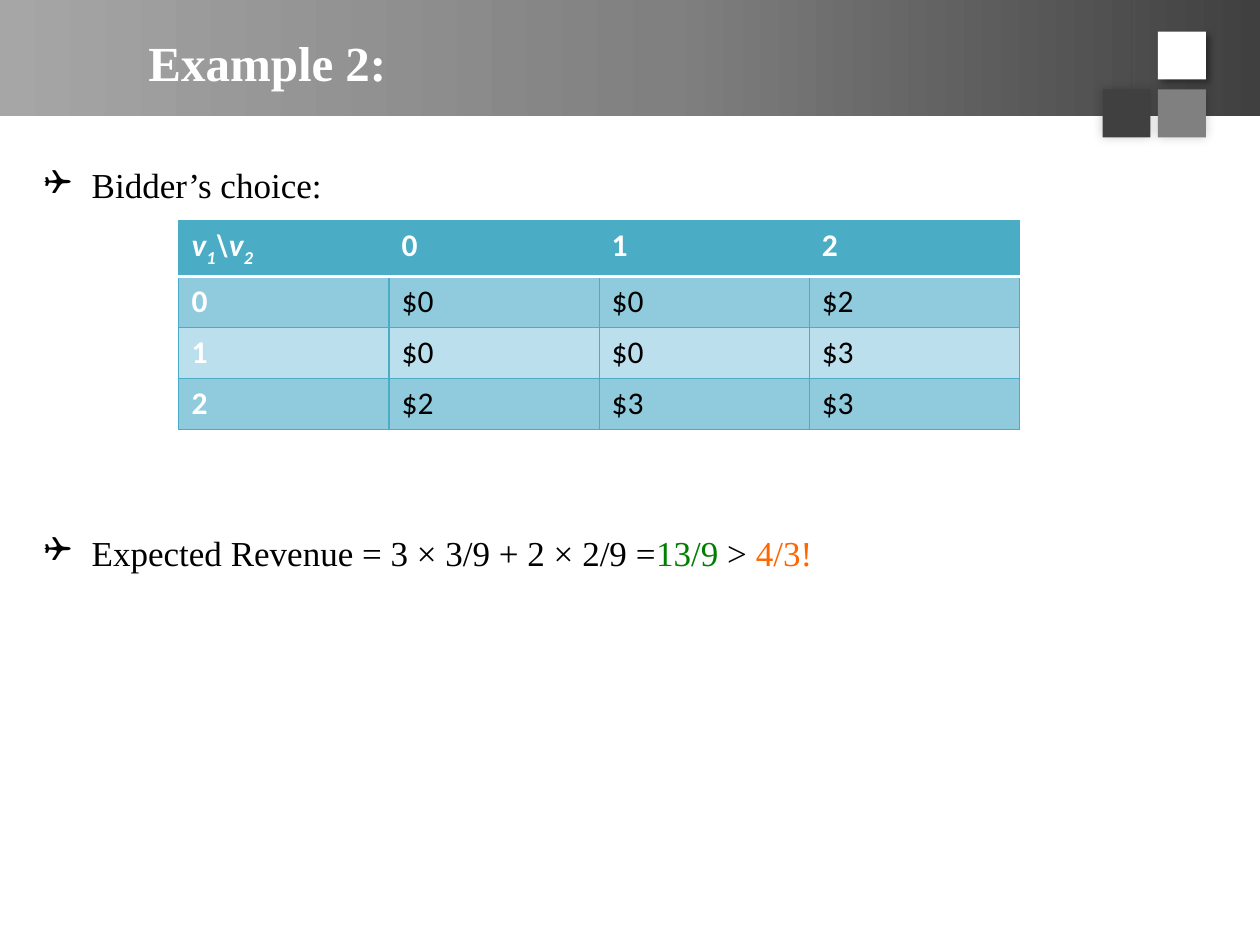
from lxml import etree
from pptx import Presentation
from pptx.dml.color import RGBColor
from pptx.enum.shapes import MSO_SHAPE
from pptx.enum.text import MSO_ANCHOR
from pptx.oxml import parse_xml
from pptx.oxml.ns import nsdecls, qn
from pptx.util import Inches, Pt

WHITE = RGBColor(0xFF, 0xFF, 0xFF)
BLACK = RGBColor(0, 0, 0)
SILVER = RGBColor(0xBF, 0xBF, 0xBF)
GRAY = RGBColor(0x80, 0x80, 0x80)
CHARCOAL = RGBColor(0x40, 0x40, 0x40)
GREEN = RGBColor(0, 0x80, 0)
ORANGE = RGBColor(0xFF, 0x66, 0)
TEAL = RGBColor(0x4B, 0xAC, 0xC6)
TEAL_MID = RGBColor(0x8F, 0xCA, 0xDD)
TEAL_LIGHT = RGBColor(0xBB, 0xDF, 0xED)
SERIF, SANS = "Times New Roman", "Calibri"

# Content
TITLE = "Example 2:"
# Each bullet: space before in points, then (text, colour) runs
BULLETS = [
    (0, [("Bidder’s choice:", BLACK)]),
    (186, [("Expected Revenue = 3 × 3/9 + 2 × 2/9 =", BLACK), ("13/9", GREEN),
           (" > ", BLACK), ("4/3!", ORANGE)]),
]
CORNER_RUNS = [("v", 0), ("1", -25), ("\\v", 0), ("2", -25)]  # text, baseline %
PAYMENTS = [
    ["", "0", "1", "2"],
    ["0", "$0", "$0", "$2"],
    ["1", "$0", "$0", "$3"],
    ["2", "$2", "$3", "$3"],
]
BAND_STOPS = [(0, "A6A6A6"), (53, "808080"), (100, "404040")]
# Left, top, colour, shadow (opacity %, blur pt, distance pt, angle)
SQUARES = [
    (8.75, 0.71, CHARCOAL, (20, 6, 0, 225)),
    (9.19, 0.71, GRAY, (20, 6, 0, 315)),
    (9.19, 0.25, WHITE, (40, 4, 3, 45)),
]
SQUARE_SIZE = 0.38
TILTED_PANEL = [(8.85, 0.21), (9.13, 0.36), (9.13, 0.67), (8.85, 0.52)]


def add_run(paragraph, text, font, size, color, bold=False, italic=False):
    run = paragraph.add_run()
    run.text = text
    run.font.name, run.font.size = font, Pt(size)
    run.font.color.rgb = color
    run.font.bold, run.font.italic = bold, italic
    return run


def paint(shape, color):
    shape.shadow.inherit = False
    shape.fill.solid()
    shape.fill.fore_color.rgb = color
    shape.line.fill.background()


def add_shadow(shape, opacity, blur, distance, angle):
    effects = shape._element.spPr.find(qn("a:effectLst"))
    effects.append(parse_xml(
        f'<a:outerShdw {nsdecls("a")} blurRad="{Pt(blur)}" dist="{Pt(distance)}" '
        f'dir="{angle * 60000}" algn="ctr" rotWithShape="0"><a:srgbClr val="000000">'
        f'<a:alpha val="{opacity * 1000}"/></a:srgbClr></a:outerShdw>'))


def add_panel(slide, points, color):
    builder = slide.shapes.build_freeform(*points[0], scale=Inches(1))
    builder.add_line_segments(points[1:], close=True)
    paint(builder.convert_to_shape(), color)


def set_border(cell, side, color, width):
    cell._tc.get_or_add_tcPr().append(parse_xml(
        f'<a:ln{side} {nsdecls("a")} w="{Pt(width)}"><a:solidFill>'
        f'<a:srgbClr val="{color}"/></a:solidFill></a:ln{side}>'))


def add_header(slide):
    # Gradient band
    band = slide.shapes.add_shape(MSO_SHAPE.RECTANGLE, 0, 0, Inches(10), Inches(0.92))
    paint(band, GRAY)
    band.fill.gradient()
    band.fill.gradient_angle = 0
    stops = band._element.spPr.find(qn("a:gradFill")).find(qn("a:gsLst"))
    for stop in list(stops):
        stops.remove(stop)
    for position, color in BAND_STOPS:
        stop = etree.SubElement(stops, qn("a:gs"), pos=str(position * 1000))
        etree.SubElement(stop, qn("a:srgbClr"), val=color)

    # Corner ornament: tilted panel with a dark edge, then three squares
    add_panel(slide, [(x + 0.04, y) for x, y in TILTED_PANEL], BLACK)
    add_panel(slide, TILTED_PANEL, SILVER)
    for left, top, color, shadow in SQUARES:
        square = slide.shapes.add_shape(MSO_SHAPE.RECTANGLE, Inches(left), Inches(top),
                                        Inches(SQUARE_SIZE), Inches(SQUARE_SIZE))
        paint(square, color)
        add_shadow(square, *shadow)

    # Title
    box = slide.shapes.add_textbox(Inches(1.08), Inches(0.08), Inches(8.42), Inches(0.83))
    frame = box.text_frame
    frame.word_wrap = True
    frame.vertical_anchor = MSO_ANCHOR.MIDDLE
    add_run(frame.paragraphs[0], TITLE, SERIF, 28, WHITE, bold=True)


def add_bullets(slide):
    box = slide.shapes.add_textbox(Inches(0.25), Inches(0.75), Inches(9.5), Inches(4.32))
    frame = box.text_frame
    frame.word_wrap = True
    frame.margin_top = Inches(0.55)
    for index, (space_before, runs) in enumerate(BULLETS):
        paragraph = frame.add_paragraph() if index else frame.paragraphs[0]
        paragraph.space_before = Pt(space_before)
        properties = paragraph._p.get_or_add_pPr()
        properties.set("marL", str(Inches(0.38)))
        properties.set("indent", str(Inches(-0.38)))
        etree.SubElement(properties, qn("a:buFont"), typeface="Wingdings")
        etree.SubElement(properties, qn("a:buChar"), char="❑")
        for text, color in runs:
            add_run(paragraph, text, SERIF, 20, color)


def add_payments(slide):
    rows, columns = len(PAYMENTS), len(PAYMENTS[0])
    table = slide.shapes.add_table(rows, columns, Inches(1.42), Inches(1.75),
                                   Inches(6.67), Inches(1.62)).table
    for row, values in enumerate(PAYMENTS):
        for column, value in enumerate(values):
            cell = table.cell(row, column)
            for side in "LRTB":
                under_header = (row, side) in ((0, "B"), (1, "T"))
                set_border(cell, side, *((WHITE, 2.08) if under_header else (TEAL, 0.75)))
            cell.fill.solid()
            cell.fill.fore_color.rgb = (
                TEAL if row == 0 else TEAL_MID if row % 2 else TEAL_LIGHT)
            paragraph = cell.text_frame.paragraphs[0]
            heading = row == 0 or column == 0
            if value:
                add_run(paragraph, value, SANS, 18, WHITE if heading else BLACK, heading)
                continue
            for text, baseline in CORNER_RUNS:
                run = add_run(paragraph, text, SANS, 18, WHITE, bold=True, italic=True)
                run.font._element.set("baseline", str(baseline * 1000))


def main():
    presentation = Presentation()
    presentation.slide_width, presentation.slide_height = Inches(10), Inches(7.5)
    slide = presentation.slides.add_slide(presentation.slide_layouts[6])
    add_header(slide)
    add_bullets(slide)
    add_payments(slide)
    presentation.save("out.pptx")


if __name__ == "__main__":
    main()
